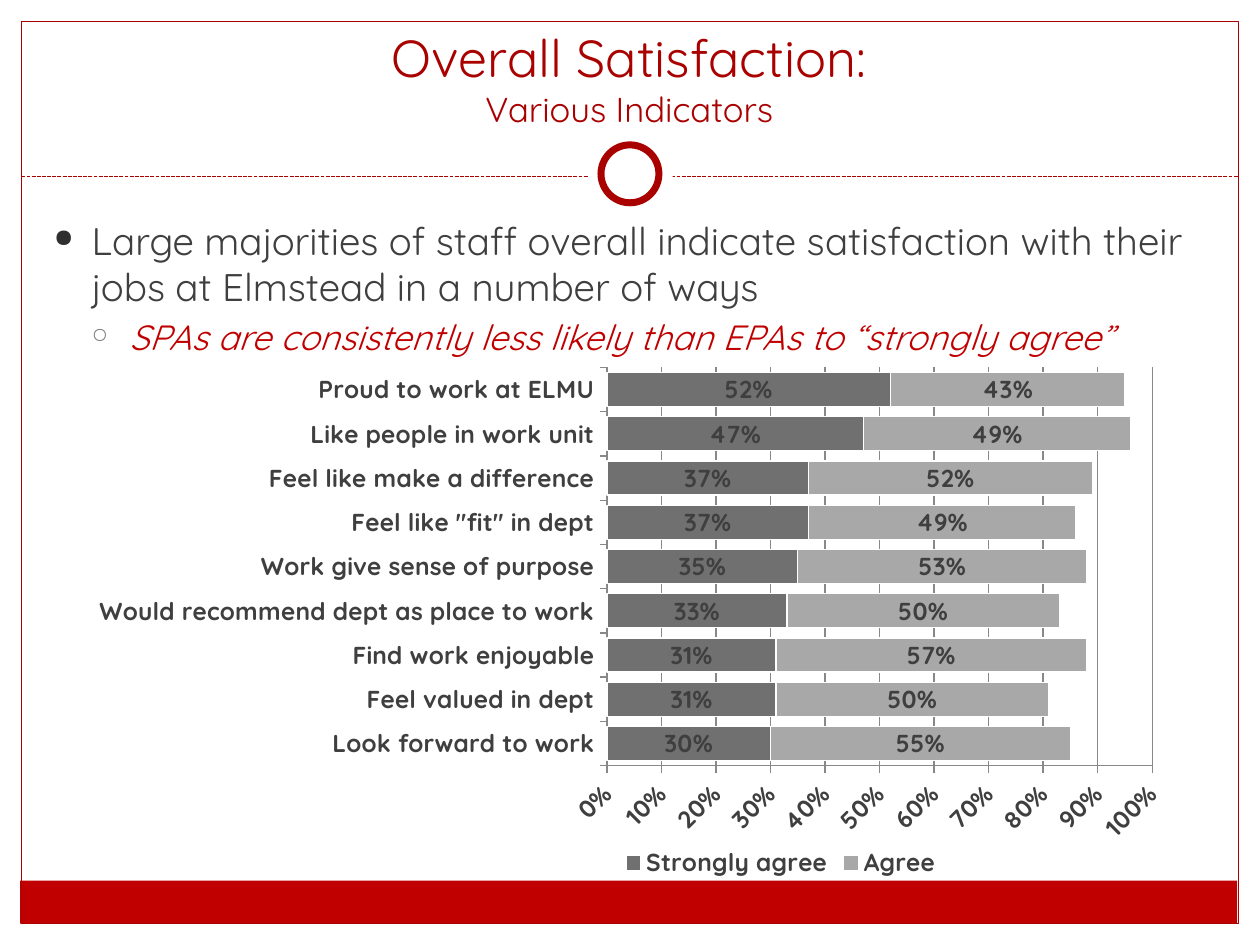
from lxml import etree
from pptx import Presentation
from pptx.chart.data import CategoryChartData
from pptx.dml.color import RGBColor
from pptx.enum.chart import XL_CHART_TYPE, XL_LEGEND_POSITION, XL_TICK_MARK
from pptx.enum.dml import MSO_LINE
from pptx.enum.shapes import MSO_CONNECTOR, MSO_SHAPE
from pptx.enum.text import MSO_ANCHOR, MSO_AUTO_SIZE, PP_ALIGN
from pptx.oxml import parse_xml
from pptx.oxml.ns import nsdecls, qn
from pptx.util import Inches, Pt

RECTANGLE, OVAL = MSO_SHAPE.RECTANGLE, MSO_SHAPE.OVAL
STRAIGHT = MSO_CONNECTOR.STRAIGHT
DASH = MSO_LINE.SQUARE_DOT
CENTER, BOTTOM = PP_ALIGN.CENTER, MSO_ANCHOR.BOTTOM
NO_AUTOFIT = MSO_AUTO_SIZE.NONE
STACKED_BAR = XL_CHART_TYPE.BAR_STACKED
LEGEND_BOTTOM = XL_LEGEND_POSITION.BOTTOM
TICK_OUTSIDE, TICK_CROSS = XL_TICK_MARK.OUTSIDE, XL_TICK_MARK.CROSS

FONT = "Quicksand"
DARK_RED, RED, WHITE = "A90000", "C00000", "FFFFFF"
TEXT, GRID = "3F3F3F", "888888"

# Items from bottom to top: label, strongly agree, agree
INDICATORS = [
    ("Look forward to work", 0.30, 0.55),
    ("Feel valued in dept", 0.31, 0.50),
    ("Find work enjoyable", 0.31, 0.57),
    ("Would recommend dept as place to work", 0.33, 0.50),
    ("Work give sense of purpose", 0.35, 0.53),
    ('Feel like "fit" in dept', 0.37, 0.49),
    ("Feel like make a difference", 0.37, 0.52),
    ("Like people in work unit", 0.47, 0.49),
    ("Proud to work at ELMU", 0.52, 0.43),
]
SERIES_COLORS = {"Strongly agree": "707070", "Agree": "A8A8A8"}


def rgb(value):
    return RGBColor.from_string(value)


def box(left, top, width, height):
    return [Inches(length) for length in (left, top, width, height)]


def set_layout(element, before, target=None, **fractions):
    """Place a chart part by fractions of the chart area."""
    for old in element.findall(qn("c:layout")):
        element.remove(old)
    parts = f'<c:layoutTarget val="{target}"/>' if target else ""
    parts += '<c:xMode val="edge"/><c:yMode val="edge"/>'
    parts += "".join(f'<c:{key} val="{value}"/>' for key, value in fractions.items())
    layout = parse_xml(f'<c:layout {nsdecls("c")}><c:manualLayout>{parts}'
                       "</c:manualLayout></c:layout>")
    element.find(qn(before)).addprevious(layout)


class SlideBuilder:
    def __init__(self, slide):
        self.slide = slide

    def style(self, font, size, color, **options):
        font.name, font.size = FONT, Pt(size)
        font.color.rgb = rgb(color)
        for name, value in options.items():
            setattr(font, name, value)

    def shape(self, kind, place, fill=None, line=None, width=0.75):
        shape = self.slide.shapes.add_shape(kind, *box(*place))
        shape.shadow.inherit = False
        if fill:
            shape.fill.solid()
            shape.fill.fore_color.rgb = rgb(fill)
        else:
            shape.fill.background()
        if line:
            shape.line.color.rgb = rgb(line)
            shape.line.width = Pt(width)
        else:
            shape.line.fill.background()

    def dashed_line(self, left, right, top, color):
        line = self.slide.shapes.add_connector(
            STRAIGHT, Inches(left), Inches(top), Inches(right), Inches(top))
        line.line.color.rgb = rgb(color)
        line.line.width = Pt(0.75)
        line.line.dash_style = DASH
        properties = line._element.spPr
        etree.SubElement(properties, qn("a:effectLst"))

    def title(self, place, lines):
        title = self.slide.shapes.title
        title.left, title.top, title.width, title.height = box(*place)
        frame = title.text_frame
        frame.auto_size, frame.vertical_anchor = NO_AUTOFIT, BOTTOM
        paragraph = frame.paragraphs[0]
        paragraph.alignment = CENTER
        for index, (text, size) in enumerate(lines):
            if index:
                paragraph.add_line_break()
            run = paragraph.add_run()
            run.text = text
            self.style(run.font, size, DARK_RED)

    def bullets(self, place, items):
        frame = self.slide.shapes.add_textbox(*box(*place)).text_frame
        frame.word_wrap = True
        for level, (text, size, color, italic, symbol, symbol_color, scale) in enumerate(items):
            paragraph = frame.add_paragraph() if level else frame.paragraphs[0]
            paragraph.text, paragraph.level = text, level
            paragraph.space_before = Pt(size * 0.2)
            paragraph.line_spacing = 1.0
            self.style(paragraph.font, size, color, italic=italic)
            properties = paragraph._p.get_or_add_pPr()
            properties.set("marL", str(Inches(0.3 * (level + 1))))
            properties.set("indent", str(Inches(-0.3)))
            defaults = properties.find(qn("a:defRPr"))
            for xml in (f'<a:buClr {nsdecls("a")}><a:srgbClr val="{symbol_color}"/></a:buClr>',
                        f'<a:buSzPct {nsdecls("a")} val="{scale * 1000}"/>',
                        f'<a:buChar {nsdecls("a")} char="{symbol}"/>'):
                defaults.addprevious(parse_xml(xml))

    def stacked_bars(self, place, rows, colors):
        labels, *columns = zip(*rows)
        data = CategoryChartData(number_format="0%")
        data.categories = labels
        for name, values in zip(colors, columns):
            data.add_series(name, values)
        chart = self.slide.shapes.add_chart(STACKED_BAR, *box(*place), data).chart
        self.style(chart.font, 14, TEXT, bold=True)
        chart.has_title = False

        # Bars and their labels
        plot = chart.plots[0]
        plot.gap_width, plot.overlap, plot.vary_by_categories = 30, 100, False
        for series, color in zip(plot.series, colors.values()):
            series.format.fill.solid()
            series.format.fill.fore_color.rgb = rgb(color)
            series.format.line.color.rgb = rgb(WHITE)
            series.format.line.width = Pt(0.75)
            series.data_labels.show_value = True
            series.data_labels.number_format = "0%"
            series.data_labels.number_format_is_linked = False

        # Axes
        category_axis, value_axis = chart.category_axis, chart.value_axis
        for axis in (category_axis, value_axis):
            axis.format.line.color.rgb = rgb(GRID)
        category_axis.major_tick_mark = TICK_OUTSIDE
        value_axis.major_tick_mark = TICK_CROSS
        value_axis.minimum_scale, value_axis.maximum_scale = 0, 1
        value_axis.major_unit = 0.1
        value_axis.major_gridlines.format.line.color.rgb = rgb(GRID)
        value_axis.tick_labels.number_format = "0%"
        value_axis.tick_labels.number_format_is_linked = False
        self.style(value_axis.tick_labels.font, 14, TEXT, bold=True)
        value_axis._element.txPr.find(qn("a:bodyPr")).set("rot", str(-45 * 60000))

        # Legend and placing
        chart.has_legend = True
        chart.legend.position = LEGEND_BOTTOM
        chart.legend.include_in_layout = False
        set_layout(chart.legend._element, "c:overlay", x=0.49, y=0.89)
        set_layout(chart._chartSpace.chart.plotArea, "c:barChart", "inner",
                   x=0.48, y=0.02, w=0.49, h=0.73)


def main():
    presentation = Presentation()
    presentation.slide_width, presentation.slide_height = Inches(10), Inches(7.5)
    builder = SlideBuilder(presentation.slides.add_slide(presentation.slide_layouts[5]))

    # Frame, footer band and ring
    builder.shape(RECTANGLE, (0.16, 6.99, 9.66, 0.34), fill=RED)
    builder.shape(RECTANGLE, (0.17, 0.17, 9.66, 7.16), line=DARK_RED)
    builder.dashed_line(0.17, 9.83, 1.4, DARK_RED)
    builder.shape(OVAL, (4.67, 1.05, 0.67, 0.67), fill=WHITE)
    builder.shape(OVAL, (4.77, 1.15, 0.46, 0.46), fill=WHITE, line=DARK_RED, width=4)

    # Text
    builder.title((0.33, 0.25, 9.33, 0.83),
                  [("Overall Satisfaction:", 29.7), ("Various Indicators", 19.8)])
    builder.bullets((0.33, 1.67, 9.3, 5), [
        ("Large majorities of staff overall indicate satisfaction with their "
         "jobs at Elmstead in a number of ways", 22, TEXT, False, "●", "2F2F2F", 65),
        ("SPAs are consistently less likely than EPAs to “strongly agree”",
         20, RED, True, "○", "7F7F7F", 60),
    ])

    # Chart
    builder.stacked_bars((0.58, 2.83, 8.83, 4.33), INDICATORS, SERIES_COLORS)
    presentation.save("out.pptx")


if __name__ == "__main__":
    main()
